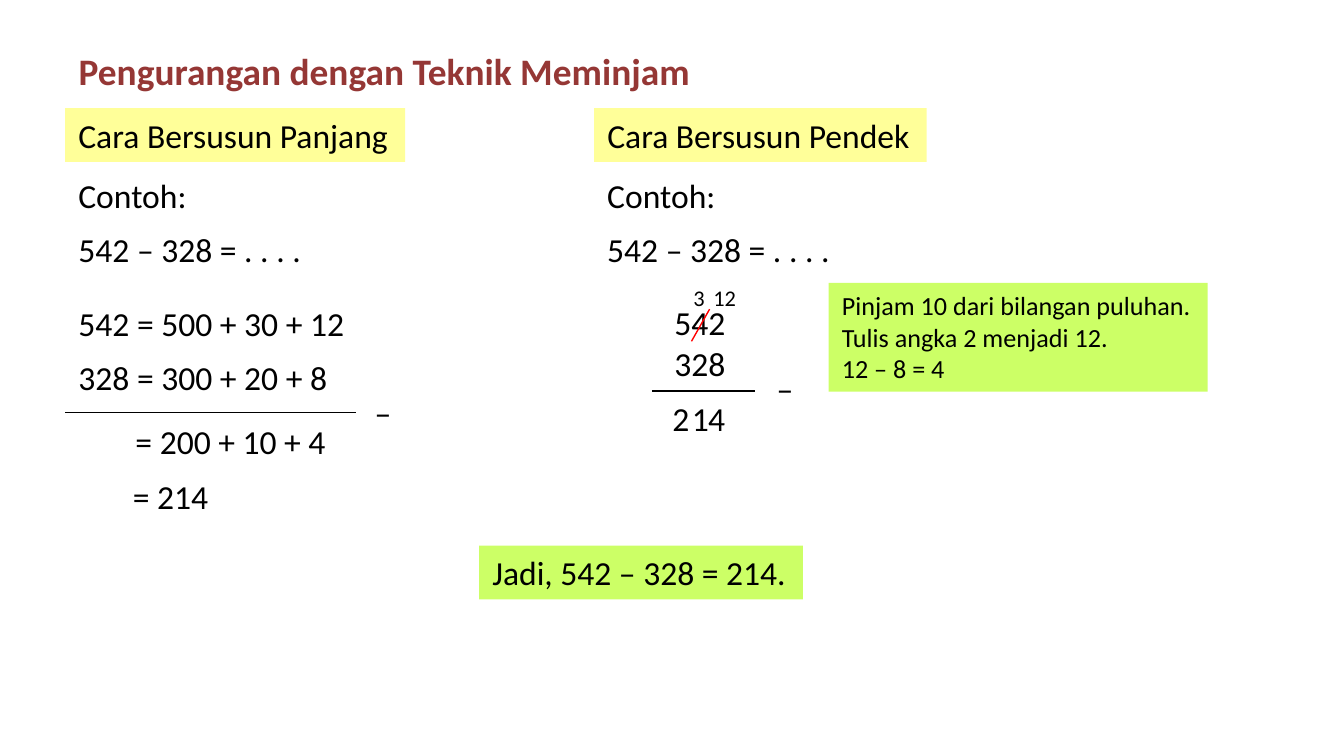
from lxml import etree
from pptx import Presentation
from pptx.dml.color import RGBColor
from pptx.enum.shapes import MSO_CONNECTOR, MSO_SHAPE
from pptx.enum.text import MSO_ANCHOR, MSO_AUTO_SIZE, PP_ALIGN
from pptx.oxml.ns import qn
from pptx.util import Emu, Pt

STRAIGHT = MSO_CONNECTOR.STRAIGHT
RECTANGLE = MSO_SHAPE.RECTANGLE
TOP = MSO_ANCHOR.TOP
FIT_SHAPE = MSO_AUTO_SIZE.SHAPE_TO_FIT_TEXT
LEFT = PP_ALIGN.LEFT

EMU_PER_PX = 4572  # 200 px to the inch
FONT = "Calibri"
ROW_HEIGHT = 80
COLORS = {
    "title": "953735",
    "text": "000000",
    "heading": "FFFF99",
    "result": "CCFF66",
    "strike": "FF0000",
}


def px(value):
    return Emu(value * EMU_PER_PX)


def color(key):
    return RGBColor.from_string(COLORS[key])


def write(shape, text, size=18, ink="text", bold=False):
    """Fill a shape with one paragraph per line of text."""
    frame = shape.text_frame
    frame.text = text
    frame.word_wrap = False
    frame.auto_size = FIT_SHAPE
    frame.vertical_anchor = TOP
    for paragraph in frame.paragraphs:
        paragraph.alignment = LEFT
        paragraph.font.name = FONT
        paragraph.font.size = Pt(size)
        paragraph.font.bold = bold
        paragraph.font.color.rgb = color(ink)


def add_title(slide, text, left, top, width, height):
    title = slide.shapes.title
    title.left, title.top = px(left), px(top)
    title.width, title.height = px(width), px(height)
    write(title, text, size=20, ink="title", bold=True)


def add_label(slide, text, left, top, width, height=ROW_HEIGHT, **style):
    box = slide.shapes.add_textbox(px(left), px(top), px(width), px(height))
    write(box, text, **style)


def add_panel(slide, text, left, top, width, height=ROW_HEIGHT, fill="result", **style):
    panel = slide.shapes.add_shape(RECTANGLE, px(left), px(top), px(width), px(height))
    panel.shadow.inherit = False
    panel.fill.solid()
    panel.fill.fore_color.rgb = color(fill)
    panel.line.fill.background()
    write(panel, text, **style)


def add_rule(slide, x1, y1, x2, y2, ink="text"):
    rule = slide.shapes.add_connector(STRAIGHT, px(x1), px(y1), px(x2), px(y2))
    rule.line.color.rgb = color(ink)
    rule.line.width = Pt(0.75)
    etree.SubElement(rule._element.spPr, qn("a:effectLst"))


def add_method(slide, heading, left, heading_width, problem_width):
    """Heading and example problem that open each column."""
    add_panel(slide, heading, left, 161, heading_width, fill="heading")
    add_label(slide, "Contoh:", left, 250, 206)
    add_label(slide, "542 – 328 = . . . .", left, 331, problem_width)


def add_long_working(slide, left):
    add_label(slide, "542 = 500 + 30 + 12", left, 441, 442)
    add_label(slide, "328 = 300 + 20 + 8", left, 522, 416)
    add_rule(slide, left, 614, 530, 614)
    add_label(slide, "–", 538, 574, 66)
    add_label(slide, "= 200 + 10 + 4", 182, 617, 328)
    add_label(slide, "= 214", 178, 698, 154)


def add_short_working(slide):
    add_label(slide, "542\n328", 984, 440, 118, 142)
    add_rule(slide, 970, 582, 1124, 582)
    add_label(slide, "–", 1136, 538, 66)

    # Result digits, worked from right to left
    for digit, left in (("4", 1034), ("1", 1010), ("2", 981)):
        add_label(slide, digit, left, 582, 66)

    # Borrowing: crossed-out tens and the new digits above
    add_rule(slide, 1029, 508, 1056, 460, ink="strike")
    for digit, left, width in (("3", 1012, 58), ("12", 1042, 74)):
        add_label(slide, digit, left, 413, width, 60, size=12)

    add_panel(
        slide,
        "Pinjam 10 dari bilangan puluhan.\nTulis angka 2 menjadi 12.\n12 – 8 = 4",
        1233, 421, 564, 162, size=14,
    )


def main():
    presentation = Presentation()
    presentation.slide_width, presentation.slide_height = px(2000), px(1125)
    slide = presentation.slides.add_slide(presentation.slide_layouts[5])
    long_left, short_left = 97, 884

    add_title(slide, "Pengurangan dengan Teknik Meminjam", long_left, 62, 958, 88)

    # Long column method
    add_method(slide, "Cara Bersusun Panjang", long_left, 506, 376)
    add_long_working(slide, long_left)

    # Short column method
    add_method(slide, "Cara Bersusun Pendek", short_left, 495, 388)
    add_short_working(slide)

    # Conclusion
    add_panel(slide, "Jadi, 542 – 328 = 214.", 713, 812, 482)

    presentation.save("out.pptx")


if __name__ == "__main__":
    main()
